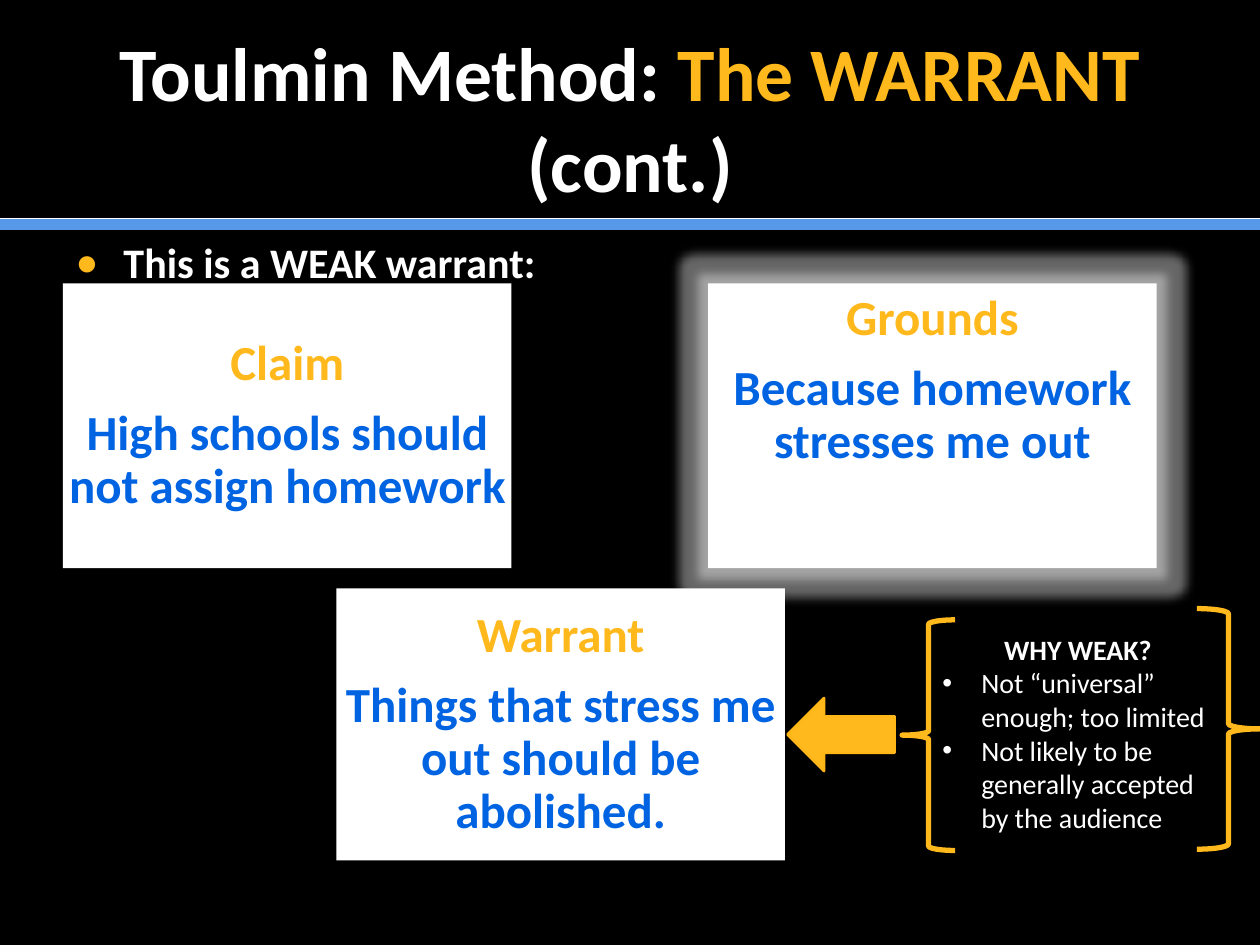
from lxml import etree
from pptx import Presentation
from pptx.dml.color import RGBColor
from pptx.enum import shapes, text
from pptx.oxml.ns import qn
from pptx.util import Inches, Pt

THEME = {
    "font": "Calibri",
    "black": "000000", "white": "FFFFFF", "gold": "FFB91D", "edge": "FFB717",
    "blue": "0064E2", "band": "5799E8",
    "title": 43.2, "body": 24, "card": 28, "note": 16,
}
rgb = {k: RGBColor.from_string(v) for k, v in THEME.items()
       if isinstance(v, str) and len(v) == 6}

prs = Presentation()
prs.slide_width, prs.slide_height = Inches(10), Inches(7.5)
COL, ROW = prs.slide_width / 100, prs.slide_height / 75
s = prs.slides.add_slide(prs.slide_layouts[1])
s.background.fill.solid()
s.background.fill.fore_color.rgb = rgb["black"]


def grid(x, y, w, h):
    """Turn columns and rows into left, top, width and height."""
    return [int(n) for n in (x * COL, y * ROW, w * COL, h * ROW)]


def write(tf, size, paras, margin=None, anchor=text.MSO_ANCHOR.TOP):
    """Fill a frame; each paragraph is (format, bullet, runs of text, colour, bold)."""
    frame = {"word_wrap": True, "auto_size": text.MSO_AUTO_SIZE.NONE, "vertical_anchor": anchor}
    if margin is not None:
        frame.update({f"margin_{side}": margin for side in ("left", "top", "right", "bottom")})
    for name, value in frame.items():
        setattr(tf, name, value)
    for i, (fmt, bullet, runs) in enumerate(paras):
        p = tf.add_paragraph() if i else tf.paragraphs[0]
        for name, value in fmt.items():
            setattr(p, name, value)
        if bullet:
            char, indent, color, scale = bullet
            pPr = p._p.get_or_add_pPr()
            pPr.set("marL", str(Inches(indent)))
            pPr.set("indent", str(-Inches(indent)))
            clr = etree.SubElement(pPr, qn("a:buClr"))
            etree.SubElement(clr, qn("a:srgbClr"), val=THEME[color])
            etree.SubElement(pPr, qn("a:buSzPct"), val=str(scale * 1000))
            etree.SubElement(pPr, qn("a:buFont"), typeface="Arial")
            etree.SubElement(pPr, qn("a:buChar"), char=char)
        for words, color, bold in runs:
            r = p.add_run()
            r.text = words
            for name, value in {"name": THEME["font"], "size": Pt(size), "bold": bold}.items():
                setattr(r.font, name, value)
            r.font.color.rgb = rgb[color]


centred = {"alignment": text.PP_ALIGN.CENTER}
MIDDLE = text.MSO_ANCHOR.MIDDLE

# Rule under the title
for y, color, weight in ((17.8, "band", 7), (17.3, "white", 0.5)):
    x1, y1, w, _ = grid(0, y, 100, 0)
    line = s.shapes.add_connector(shapes.MSO_CONNECTOR.STRAIGHT, x1, y1, x1 + w, y1)
    line.line.color.rgb = rgb[color]
    line.line.width = Pt(weight)
    etree.SubElement(line._element.spPr, qn("a:effectLst"))

# Title and lead-in bullet
title, body = s.shapes.title, s.placeholders[1]
for sp, at in ((title, (5, 3, 90, 12.5)), (body, (5, 18.3, 90, 7.5))):
    sp.left, sp.top, sp.width, sp.height = grid(*at)
write(title.text_frame, THEME["title"], [
    (centred, None, [("Toulmin Method: ", "white", True), ("The WARRANT ", "gold", True),
                     ("(cont.)", "white", True)])], anchor=MIDDLE)
write(body.text_frame, THEME["body"], [
    ({"space_before": Pt(20)}, ("●", 0.38, "gold", 90),
     [("This is a WEAK warrant:", "white", True)])])

# Claim, grounds and warrant cards
CARD_W = 35.6
card_format = {**centred, "line_spacing": 0.9, "space_before": Pt(0),
               "space_after": Pt(0.35 * THEME["card"])}
cards = [
    ("Claim", "High schools should not assign homework", (5, 22.5, CARD_W, 22.6), None),
    ("Grounds", "Because homework stresses me out", (56.2, 22.5, CARD_W, 22.6),
     (56.2, 18.3, CARD_W, 23.9)),
    ("Warrant", "Things that stress me out should be abolished.",
     (26.7, 46.7, CARD_W, 21.6), None),
]
for heading, words, at, raised_text in cards:
    sp = s.shapes.add_shape(shapes.MSO_SHAPE.RECTANGLE, *grid(*at))
    sp.shadow.inherit = False
    sp.fill.solid()
    sp.fill.fore_color.rgb = rgb["white"]
    sp.line.fill.background()
    if raised_text:
        effects = sp._element.spPr.find(qn("a:effectLst"))
        glow = etree.SubElement(effects, qn("a:glow"), rad=str(Pt(11)))
        clr = etree.SubElement(glow, qn("a:srgbClr"), val=THEME["white"])
        etree.SubElement(clr, qn("a:alpha"), val="40000")
        sp = s.shapes.add_textbox(*grid(*raised_text))
    write(sp.text_frame, THEME["card"], [
        (card_format, None, [(heading, "gold", True)]),
        (card_format, None, [(words, "blue", True)])], Inches(0.02), MIDDLE)

# Arrow and braces around the note
for kind, at, fill, edge, weight in (
        (shapes.MSO_SHAPE.LEFT_ARROW, (62.5, 55.4, 8.5, 5.8), "gold", "edge", 1.5),
        (shapes.MSO_SHAPE.LEFT_BRACE, (71.6, 49.2, 4.2, 18.3), None, "gold", 3),
        (shapes.MSO_SHAPE.RIGHT_BRACE, (95, 48.3, 5, 19.1), None, "gold", 3)):
    sp = s.shapes.add_shape(kind, *grid(*at))
    sp.shadow.inherit = False
    if fill:
        sp.fill.solid()
        sp.fill.fore_color.rgb = rgb[fill]
    else:
        sp.fill.background()
    sp.line.color.rgb = rgb[edge]
    sp.line.width = Pt(weight)

# Why the warrant is weak
note = s.shapes.add_textbox(*grid(73.8, 49.7, 23.5, 17.2))
dot = ("•", 0.31, "white", 100)
write(note.text_frame, THEME["note"], [
    (centred, None, [("WHY WEAK?", "white", True)]),
    ({}, dot, [("Not “universal” enough; too limited", "white", False)]),
    ({}, dot, [("Not likely to be generally accepted by the audience", "white", False)])])

prs.save("out.pptx")
